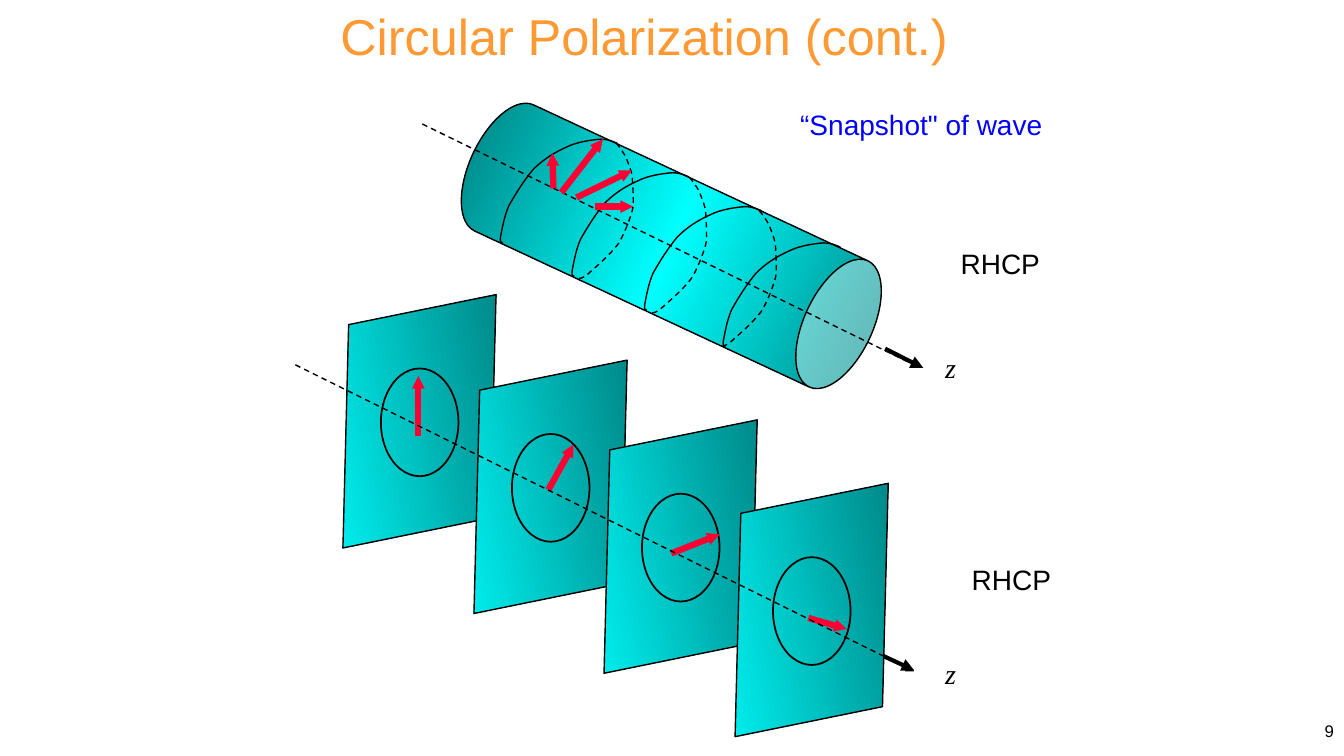
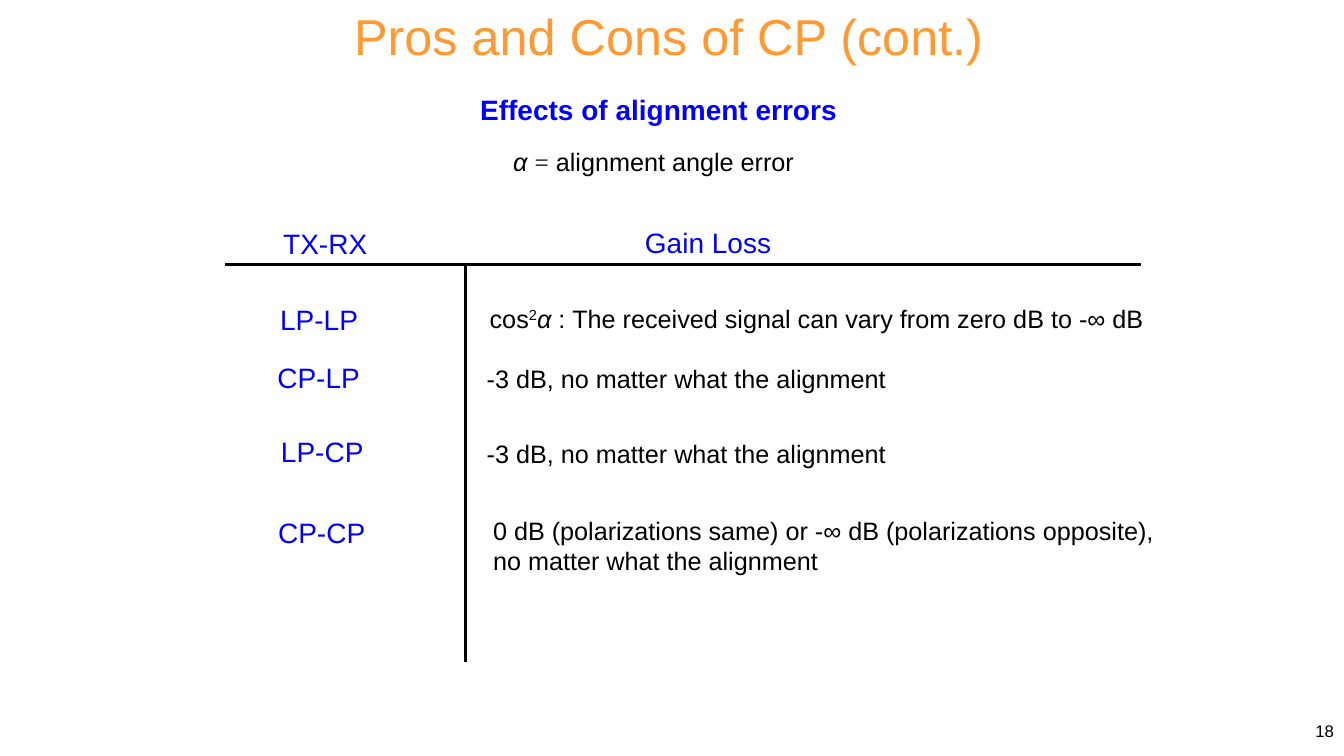
"""Build two slides on circular polarization of waves."""
from copy import deepcopy

from lxml import etree
from pptx import Presentation
from pptx.dml.color import RGBColor
from pptx.enum import dml, shapes, text
from pptx.oxml.ns import qn
from pptx.util import Pt

ORANGE = RGBColor(0xFF, 0x99, 0x33)
BLUE = RGBColor(0x00, 0x00, 0xFF)
BLACK = RGBColor(0x00, 0x00, 0x00)
RED = RGBColor(0xFF, 0x00, 0x33)
CYAN = RGBColor(0x00, 0xFF, 0xFF)
TEAL = RGBColor(0x00, 0x76, 0x76)
SANS, SERIF = "Arial", "Times New Roman"
LEFT, MID, RIGHT = text.PP_ALIGN.LEFT, text.PP_ALIGN.CENTER, text.PP_ALIGN.RIGHT
KIND = shapes.MSO_SHAPE

FRONT = [(2, 74), (1, 73.5), (0, 74), (0.5, 70), (1.5, 65), (3, 55.5), (6.5, 47.5),
         (11, 39.5), (17.5, 29), (24, 21.5), (31, 14.5), (39, 9.5), (47, 6),
         (54.5, 2), (65.5, 0.5), (72, 0), (78, 0), (81.5, 2), (84, 3)]
BACK = [(27.5, 0), (29, 1.5), (32.5, 6.5), (34.5, 10), (36, 14.5), (38, 18), (39, 24),
        (39.5, 30), (40, 43), (39.5, 46), (39, 50), (34, 64), (29, 72),
        (23, 80), (13, 88.5), (8, 93), (3.5, 97), (2, 96.5), (0, 97)]
PLANES = [((228, 223.2), (298.8, 311.8, 298.8, 268.6)),
          ((321.6, 270), (391.7, 349.9, 409.7, 317.5)),
          ((414.5, 312.7), (479.5, 395.3, 514.1, 381.6)),
          ((508.1, 358), (577.4, 441.4, 604.8, 449.3))]
FIELDS = [(395.3, 134.6, 394.6, 109.4), (401, 137.5, 430.6, 99.4),
          (411.8, 141.1, 451.4, 121.7), (424.8, 147.6, 452.2, 147.6)]
SAME = "-3 dB, no matter what the alignment"
LABELS = [("TX-RX", 195.2, 158.4, 75.6), ("Gain Loss", 453.6, 157.3, 105.1),
          ("LP-LP", 193, 212.8, 70.6), ("CP-LP", 191, 253.8, 74.2),
          ("LP-CP", 193.6, 306.7, 74.2), ("CP-CP", 191.5, 365, 77.8)]
LOSSES = [([["cos", ("2", "sup"), ("α", "it"),
             " : The received signal can vary from zero dB to -∞ dB"]], 342.7, 212.8, 487.4),
          ([[SAME]], 340.6, 256, 302.4),
          ([[SAME]], 340.6, 309.6, 302.4),
          ([["0 dB (polarizations same) or -∞ dB (polarizations opposite),"],
            ["no matter what the alignment"]], 345.1, 364.7, 496.1)]


def fill_text(frame, paras, size, color, align=LEFT, font=SANS, bold=False, wrap=False):
    """Write paragraphs of runs; a run is a string or a (string, style) pair."""
    frame.word_wrap = wrap
    frame.auto_size = text.MSO_AUTO_SIZE.NONE
    for i, runs in enumerate(paras):
        para = frame.paragraphs[0] if i == 0 else frame.add_paragraph()
        para.alignment = align
        for item in runs:
            words, style = (item, "") if isinstance(item, str) else item
            run = para.add_run()
            run.text = words
            run.font.size = Pt(size)
            run.font.color.rgb = color
            run.font.name = SERIF if style == "serif" else font
            run.font.bold = bold
            run.font.italic = style == "it"
            if style == "sup":
                run.font._element.set("baseline", "30000")


def add_text(slide, x, y, w, h, paras, size, color, **style):
    """Add a text box and return its frame."""
    frame = slide.shapes.add_textbox(Pt(x), Pt(y), Pt(w), Pt(h)).text_frame
    fill_text(frame, paras, size, color, **style)
    return frame


def add_page(deck, title, x, w, number):
    """Add a slide with its title and its page number."""
    slide = deck.slides.add_slide(deck.slide_layouts[5])
    head = slide.shapes.title
    head.left, head.top, head.width, head.height = Pt(x), Pt(0), Pt(w), Pt(50.4)
    head.text_frame.vertical_anchor = text.MSO_ANCHOR.TOP
    fill_text(head.text_frame, [[title]], 36, ORANGE, align=MID, wrap=True)
    foot = add_text(slide, 760, 504, 200, 36, [[number]], 12, BLACK, align=RIGHT, wrap=True)
    foot.vertical_anchor = text.MSO_ANCHOR.MIDDLE
    return slide


def set_line(shape, color, width, dash=False):
    """Style the line of a shape or connector."""
    shape.line.color.rgb = color
    shape.line.width = Pt(width)
    if dash:
        shape.line.dash_style = dml.MSO_LINE.DASH


def add_line(slide, ends, color, width, dash=False, head=None):
    """Add a straight line, with an arrowhead of the given size if any."""
    line = slide.shapes.add_connector(shapes.MSO_CONNECTOR.STRAIGHT, *map(Pt, ends))
    set_line(line, color, width, dash)
    if head:
        tip = etree.SubElement(line.line._get_or_add_ln(), qn("a:tailEnd"))
        for key, val in (("type", "triangle"), ("w", head), ("len", head)):
            tip.set(key, val)
    etree.SubElement(line._element.spPr, qn("a:effectLst"))


def add_form(slide, kind, box, width, stops=(), angle=0, turn=0, adjust=None):
    """Add an outlined preset shape, filled by gradient stops if any."""
    form = slide.shapes.add_shape(kind, *map(Pt, box))
    form.shadow.inherit = False
    form.rotation = turn
    if adjust is not None:
        form.adjustments[0] = adjust
    if stops:
        form.fill.gradient()
        form.fill.gradient_angle = angle
        bag = form._element.spPr.find(".//" + qn("a:gsLst"))
        for _ in stops[2:]:
            bag.append(deepcopy(bag[0]))
        for stop, (place, color) in zip(form.fill.gradient_stops, stops):
            stop.position = place
            stop.color.rgb = color
    else:
        form.fill.background()
    set_line(form, BLACK, width)


def add_curve(slide, x, y, knots, dash=False):
    """Draw an open chain of cubic curves with its box at x, y."""
    points = [(Pt(x + a), Pt(y + b)) for a, b in knots]
    pen = slide.shapes.build_freeform(*points[0])
    pen.add_line_segments(points[1:], close=False)
    curve = pen.convert_to_shape()
    route = curve._element.spPr.find(".//" + qn("a:path"))
    legs = route.findall(qn("a:lnTo"))
    for i in range(0, len(legs), 3):
        bend = etree.SubElement(route, qn("a:cubicBezTo"))
        for leg in legs[i:i + 3]:
            bend.append(leg[0])
            route.remove(leg)
    curve.shadow.inherit = False
    curve.fill.background()
    set_line(curve, BLACK, 1, dash)


def add_tip(slide, ends, y):
    """Draw the bold tip of an axis and its letter."""
    add_line(slide, ends, BLACK, 3, head="med")
    add_text(slide, 663.1, y, 46.1, 31.7, [[(" z", "it")]], 20, BLACK, font=SERIF)


def add_planes(slide):
    """Draw the field on four planes along the axis."""
    add_tip(slide, (625, 465.8, 653, 478.8), 465.1)
    for (x, y), arrow in PLANES:
        add_form(slide, KIND.PARALLELOGRAM, (x, y, 143.3, 155.5), 1,
                 [(0, CYAN), (1, TEAL)], turn=348.5, adjust=0.25)
        add_form(slide, KIND.OVAL, (x + 44.1, y + 40, 55.4, 77), 1.25)
        add_line(slide, arrow, RED, 4.5, head="sm")
    add_line(slide, (211, 260.6, 653, 479.5), BLACK, 1, dash=True, head="med")


def add_tube(slide):
    """Draw the field inside a cylinder along the axis."""
    add_form(slide, KIND.CAN, (429.8, 19.4, 99.4, 312.5), 1,
             [(0, TEAL), (0.5, CYAN), (1, TEAL)], angle=270, turn=115, adjust=0.492)
    add_line(slide, (301.7, 88.6, 657.4, 262.8), BLACK, 1, dash=True, head="med")
    add_tip(slide, (632.2, 249.1, 659.5, 262.8), 247)
    for x, y in ((357, 99.4), (408.2, 123.4), (460, 147.6), (516.2, 173.5)):
        add_curve(slide, x, y, FRONT)
    for x, y in ((412.6, 102.2), (465, 126.7), (514.8, 150.5)):
        add_curve(slide, x, y, BACK, dash=True)
    for arrow in FIELDS:
        add_line(slide, arrow, RED, 4.5, head="sm")


def add_waves(deck):
    """Build the slide of the two wave drawings."""
    slide = add_page(deck, "Circular Polarization (cont.) ", 200.9, 528.5, "9")
    add_planes(slide)
    add_tube(slide)
    for x, y in ((679, 172.8), (686.9, 398.2)):
        add_text(slide, x, y, 123.8, 31, [["RHCP"]], 20, BLACK, wrap=True)
    add_text(slide, 564.5, 73.1, 189.4, 31.7, [["“Snapshot\" of wave"]], 20, BLUE)


def add_errors(deck):
    """Build the slide of gain losses."""
    slide = add_page(deck, "Pros and Cons of CP (cont.)", 137.5, 680.4, "18")
    add_text(slide, 334.8, 62.6, 271.4, 31.7, [["Effects of alignment errors"]], 20, BLUE,
             align=MID, bold=True)
    add_text(slide, 357.8, 100.8, 218.2, 28.8,
             [[("α ", "it"), ("=", "serif"), " alignment angle error"]], 18, BLACK, align=MID)
    for words, x, y, w in LABELS:
        add_text(slide, x, y, w, 31.7, [[words]], 20, BLUE)
    for paras, x, y, w in LOSSES:
        add_text(slide, x, y, w, 7.2 + 21.9 * len(paras), paras, 18, BLACK)
    for ends in ((160.6, 189, 815, 189), (332.6, 189, 332.6, 473)):
        add_line(slide, ends, BLACK, 2.25)


def main():
    """Build and save the deck."""
    deck = Presentation()
    deck.slide_width, deck.slide_height = Pt(960), Pt(540)
    add_waves(deck)
    add_errors(deck)
    deck.save("out.pptx")


if __name__ == "__main__":
    main()
